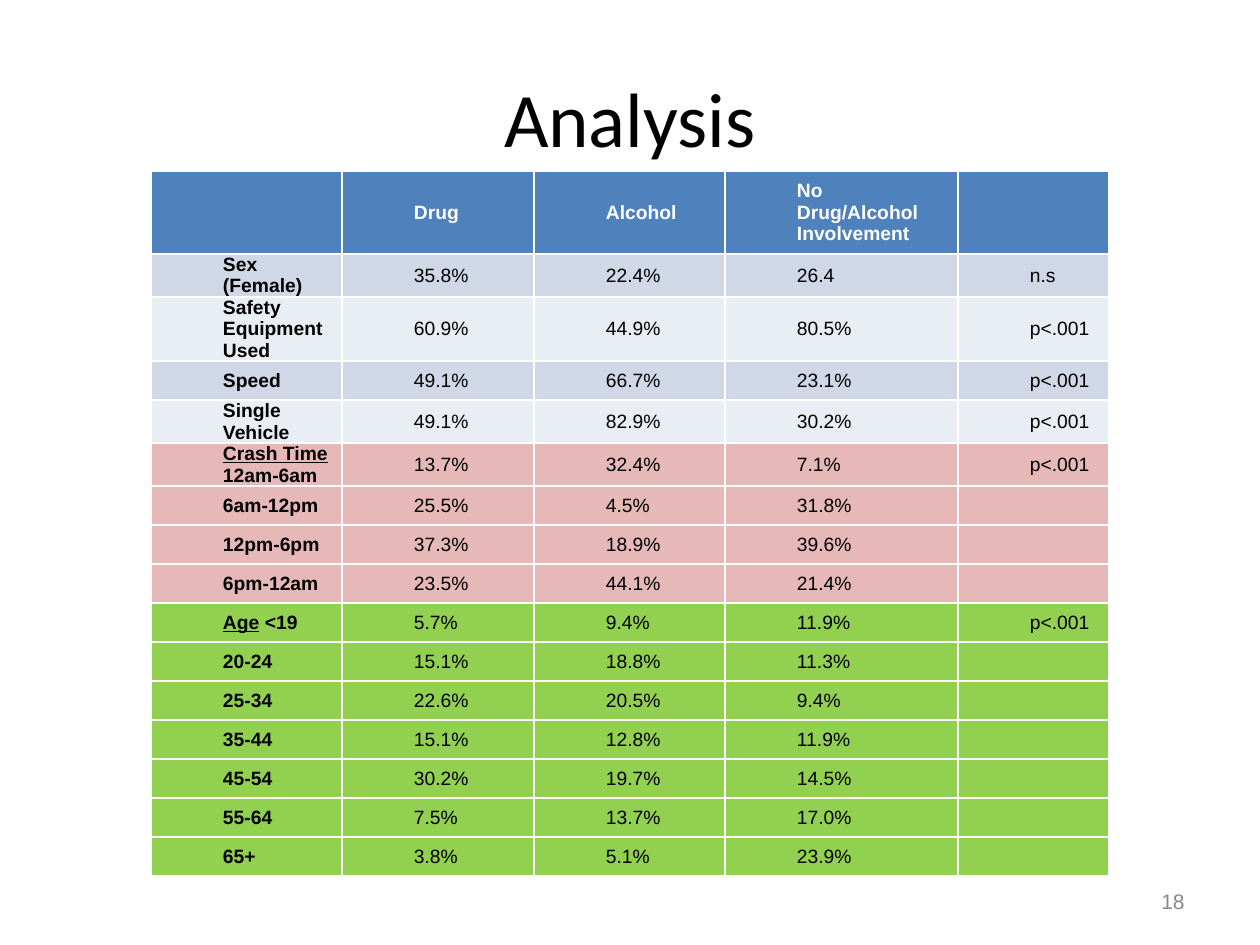
from pptx import Presentation
from pptx.dml.color import RGBColor
from pptx.enum.text import MSO_ANCHOR as Anchor, PP_ALIGN as Align
from pptx.util import Pt

# Content: text between underscores is underlined, a line break starts a paragraph
TITLE = "Analysis"
PAGE_NUMBER = "18"
HEADER = ("", "Drug", "Alcohol", "No Drug/Alcohol Involvement", "")
GROUPS = [
    (("band_dark", "band_light"), [
        ("Sex (Female)", "35.8%", "22.4%", "26.4", "n.s"),
        ("Safety Equipment Used", "60.9%", "44.9%", "80.5%", "p<.001"),
        ("Speed", "49.1%", "66.7%", "23.1%", "p<.001"),
        ("Single Vehicle", "49.1%", "82.9%", "30.2%", "p<.001"),
    ]),
    (("crash_time",), [
        ("_Crash Time_\n12am-6am", "13.7%", "32.4%", "7.1%", "p<.001"),
        ("6am-12pm", "25.5%", "4.5%", "31.8%", ""),
        ("12pm-6pm", "37.3%", "18.9%", "39.6%", ""),
        ("6pm-12am", "23.5%", "44.1%", "21.4%", ""),
    ]),
    (("age",), [
        ("_Age_ <19", "5.7%", "9.4%", "11.9%", "p<.001"),
        ("20-24", "15.1%", "18.8%", "11.3%", ""),
        ("25-34", "22.6%", "20.5%", "9.4%", ""),
        ("35-44", "15.1%", "12.8%", "11.9%", ""),
        ("45-54", "30.2%", "19.7%", "14.5%", ""),
        ("55-64", "7.5%", "13.7%", "17.0%", ""),
        ("65+", "3.8%", "5.1%", "23.9%", ""),
    ]),
]

THEME = {
    "color": {"header": "4F81BD", "band_dark": "D0D8E8", "band_light": "E9EDF4",
              "crash_time": "E6B9B8", "age": "92D050",
              "text": "000000", "header_text": "FFFFFF", "number": "898989"},
    "title": {"name": "Calibri", "size": Pt(44)},
    "cell": {"name": "Arial", "size": Pt(11)},
    "number": {"name": "Arial", "size": Pt(12)},
}

# Layout in px, 126 to the inch
PX = 914400 / 126
PAGE = (1260, 945)
TITLE_BOX = (63, 38, 1134, 157)
NUMBER_BOX = (903, 876, 294, 50)
TABLE_CORNER = (151, 171)
COLUMNS = (191, 192, 191, 233, 151)
ROW_HEIGHT = 39
TALL_ROWS = {0: 83, 2: 63, 4: 42, 5: 42}
CELL_INSET, CELL_INDENT = 9, 63


def px(*lengths):
    return [round(length * PX) for length in lengths]


def apply(target, **values):
    for name, value in values.items():
        setattr(target, name, value)


def add_span(para, text, style, color, **extra):
    span = para.add_run()
    span.text = text
    apply(span.font, **THEME[style], **extra)
    span.font.color.rgb = RGBColor.from_string(THEME["color"][color])


def fill_cell(cell, text, fill, color, bold):
    side, = px(CELL_INSET)
    apply(cell, vertical_anchor=Anchor.MIDDLE, margin_left=side,
          margin_right=side, margin_top=0, margin_bottom=0)
    cell.fill.solid()
    cell.fill.fore_color.rgb = RGBColor.from_string(THEME["color"][fill])
    frame = cell.text_frame
    for index, line in enumerate(text.split("\n")):
        para = frame.add_paragraph() if index else frame.paragraphs[0]
        para.alignment = Align.JUSTIFY
        para._p.get_or_add_pPr().set("marL", str(px(CELL_INDENT)[0]))
        for part, piece in enumerate(line.split("_")):
            if piece:
                add_span(para, piece, "cell", color, bold=bold, underline=part % 2 == 1)


deck = Presentation()
deck.slide_width, deck.slide_height = px(*PAGE)
page = deck.slides.add_slide(deck.slide_layouts[5])

# Title
title = page.shapes.title
apply(title, **dict(zip(("left", "top", "width", "height"), px(*TITLE_BOX))))
title.text_frame.vertical_anchor = Anchor.MIDDLE
title_para = title.text_frame.paragraphs[0]
title_para.alignment = Align.CENTER
add_span(title_para, TITLE, "title", "text")

# Table
rows = [("header", HEADER)]
for fills, records in GROUPS:
    rows += [(fills[i % len(fills)], record) for i, record in enumerate(records)]
heights = [TALL_ROWS.get(i, ROW_HEIGHT) for i in range(len(rows))]
table = page.shapes.add_table(len(rows), len(COLUMNS),
                              *px(*TABLE_CORNER, sum(COLUMNS), sum(heights))).table
table.horz_banding = False
for column, width in zip(table.columns, px(*COLUMNS)):
    column.width = width
for row, height, (fill, record) in zip(table.rows, px(*heights), rows):
    row.height = height
    is_header = fill == "header"
    for index, (cell, text) in enumerate(zip(row.cells, record)):
        fill_cell(cell, text, fill, "header_text" if is_header else "text",
                  bold=is_header or index == 0)

# Page number
number = page.shapes.add_textbox(*px(*NUMBER_BOX)).text_frame
apply(number, word_wrap=True, vertical_anchor=Anchor.MIDDLE)
number.paragraphs[0].alignment = Align.RIGHT
add_span(number.paragraphs[0], PAGE_NUMBER, "number", "number")

deck.save("out.pptx")
